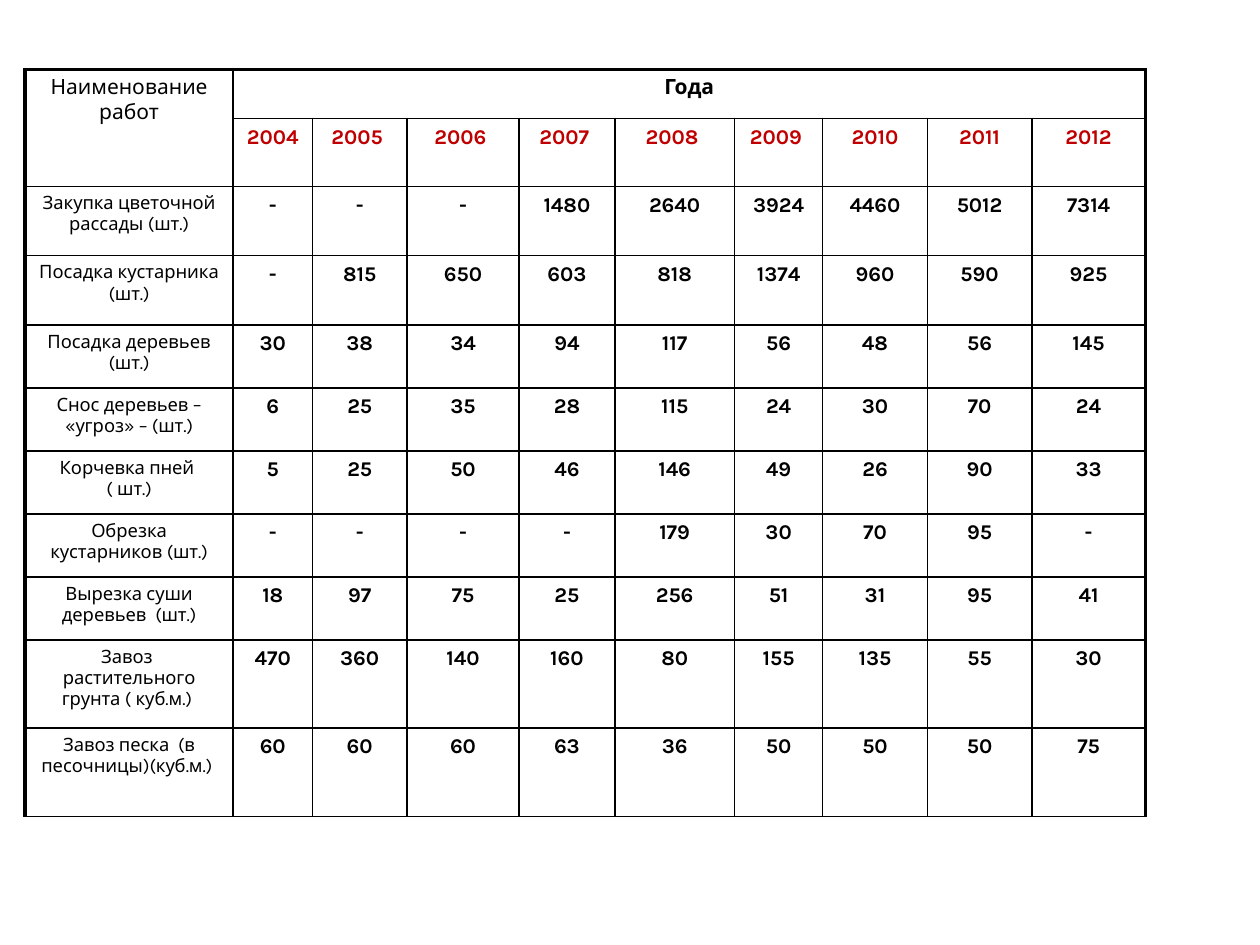
from pptx import Presentation
from pptx.dml.color import RGBColor
from pptx.enum.text import PP_ALIGN
from pptx.oxml.ns import qn
from pptx.util import Inches, Pt
from lxml import etree

CENTER = PP_ALIGN.CENTER
FONT, BLACK, RED = "Karla", "000000", "C00000"
THIN, THICK = 1, 2.25
BLANK_LAYOUT = 6

WORKS_HEADING, YEARS_HEADING = "Наименование работ", "Года"
YEARS = ["2004 ", "2005 ", "2006 ", "2007 ", "2008 ", "2009 ", "2010", "2011", "2012"]
WORKS = [
    ("Закупка цветочной рассады (шт.)", "- - - 1480 2640 3924 4460 5012 7314"),
    ("Посадка кустарника (шт.)", "- 815 650 603 818 1374 960 590 925"),
    ("Посадка деревьев (шт.)", "30 38 34 94 117 56 48 56 145"),
    ("Снос деревьев – «угроз» – (шт.)", "6 25 35 28 115 24 30 70 24"),
    ("Корчевка пней  ( шт.)", "5 25 50 46 146 49 26 90 33"),
    ("Обрезка кустарников (шт.)", "- - - - 179 30 70 95 -"),
    ("Вырезка суши деревьев  (шт.)", "18 97 75 25 256 51 31 95 41"),
    ("Завоз  растительного грунта ( куб.м.) ", "470 360 140 160 80 155 135 55 30"),
    ("Завоз песка  (в песочницы)(куб.м.) ", "60 60 60 63 36 50 50 50 75"),
]
UNSPACED_WORKS = {"Посадка кустарника (шт.)", "Посадка деревьев (шт.)"}
COLUMN_WIDTHS = [1.65, 0.63, 0.75, 0.89, 0.76, 0.95, 0.7, 0.83, 0.83, 0.9]
ROW_HEIGHTS = [0.39, 0.54, 0.55, 0.55] + [0.5] * 5 + [0.7] * 2
TABLE_LEFT, TABLE_TOP = 0.2, 0.55


def color(hex_value):
    """Turn a hex string into a colour."""
    return RGBColor.from_string(hex_value)


def write(cell, text, size=12, bold=True, ink=BLACK):
    """Fill a cell with one centred, formatted paragraph."""
    cell.text_frame.text = text
    paragraph = cell.text_frame.paragraphs[0]
    paragraph.alignment = CENTER
    if text not in UNSPACED_WORKS:
        spacing = etree.SubElement(paragraph._p.get_or_add_pPr(), qn("a:spcBef"))
        etree.SubElement(spacing, qn("a:spcPct"), val="20000")
    font = paragraph.runs[0].font
    font.name, font.size, font.bold = FONT, Pt(size), bold
    font.color.rgb = color(ink)


def draw_borders(cell, widths):
    """Draw the left, right, top and bottom lines of a cell."""
    properties = cell._tc.get_or_add_tcPr()
    for side, width in zip("LRTB", widths):
        line = etree.SubElement(properties, qn(f"a:ln{side}"), w=str(Pt(width)))
        fill = etree.SubElement(line, qn("a:solidFill"))
        etree.SubElement(fill, qn("a:srgbClr"), val=BLACK)


def main():
    """Build the slide with the table of works by year."""
    deck = Presentation()
    deck.slide_width, deck.slide_height = Inches(10), Inches(7.5)
    slide = deck.slides.add_slide(deck.slide_layouts[BLANK_LAYOUT])
    table = slide.shapes.add_table(
        len(ROW_HEIGHTS), len(COLUMN_WIDTHS), Inches(TABLE_LEFT), Inches(TABLE_TOP),
        Inches(sum(COLUMN_WIDTHS)), Inches(sum(ROW_HEIGHTS))).table
    table.first_row = table.horz_banding = False
    for column, width in zip(table.columns, COLUMN_WIDTHS):
        column.width = Inches(width)
    for row, height in zip(table.rows, ROW_HEIGHTS):
        row.height = Inches(height)

    last_column = len(COLUMN_WIDTHS) - 1
    table.cell(0, 0).merge(table.cell(1, 0))
    table.cell(0, 1).merge(table.cell(0, last_column))
    for r in range(len(ROW_HEIGHTS)):
        for c in range(len(COLUMN_WIDTHS)):
            cell = table.cell(r, c)
            right_column = c + cell.span_width - 1 if cell.is_merge_origin else c
            draw_borders(cell, (THICK if c == 0 else THIN,
                                THICK if right_column == last_column else THIN,
                                THICK if r == 0 else THIN,
                                THIN))
            cell.fill.background()

    write(table.cell(0, 0), WORKS_HEADING, bold=False)
    write(table.cell(0, 1), YEARS_HEADING)
    for c, year in enumerate(YEARS, 1):
        write(table.cell(1, c), year, ink=RED)
    for r, (work, amounts) in enumerate(WORKS, 2):
        write(table.cell(r, 0), work, size=10.5, bold=False)
        for c, amount in enumerate(amounts.split(), 1):
            write(table.cell(r, c), amount)
    deck.save("out.pptx")


if __name__ == "__main__":
    main()
